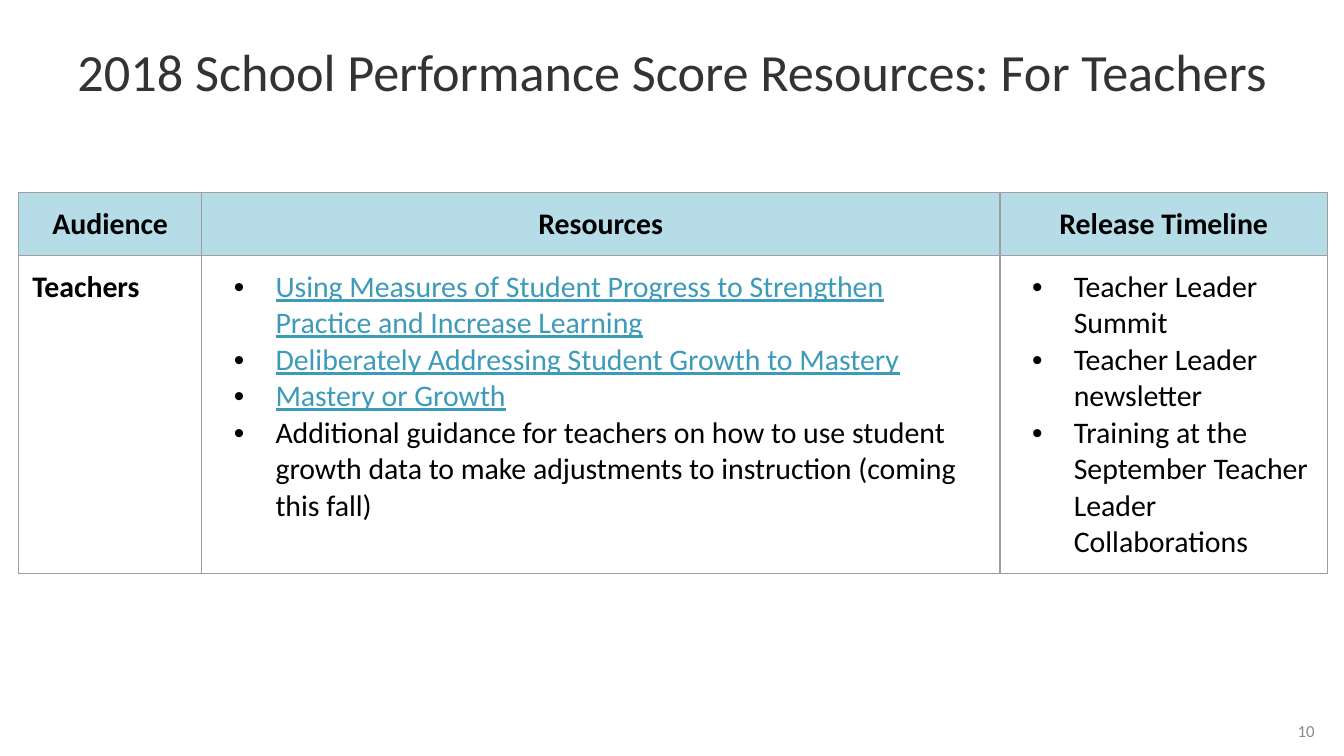
from dataclasses import dataclass

from lxml import etree
from pptx import Presentation
from pptx.dml.color import RGBColor
from pptx.enum.text import MSO_ANCHOR, PP_ALIGN
from pptx.oxml.ns import qn
from pptx.util import Inches, Pt

LEFT, CENTER, RIGHT = PP_ALIGN.LEFT, PP_ALIGN.CENTER, PP_ALIGN.RIGHT
MIDDLE = MSO_ANCHOR.MIDDLE

TITLE = "2018 School Performance Score Resources: For Teachers"
PAGE_NUMBER = "10"
HEADERS = ["Audience", "Resources", "Release Timeline"]
AUDIENCE = "Teachers"
LINKED_RESOURCES = [
    "Using Measures of Student Progress to Strengthen Practice and Increase Learning",
    "Deliberately Addressing Student Growth to Mastery",
    "Mastery or Growth",
]
OTHER_RESOURCES = [
    "Additional guidance for teachers on how to use student growth data "
    "to make adjustments to instruction (coming this fall)",
]
TIMELINE = [
    "Teacher Leader Summit",
    "Teacher Leader newsletter",
    "Training at the September Teacher Leader Collaborations",
]
SLIDE_WIDTH = Inches(10)
SLIDE_HEIGHT = SLIDE_WIDTH * 9 // 16
COLUMN_WIDTHS = [1.36, 5.94, 2.44]
ROW_HEIGHTS = [0.47, 2.37]


@dataclass(frozen=True)
class Theme:
    font: str = "Calibri"
    title: str = "333333"
    text: str = "000000"
    link: str = "3D9BBA"
    muted: str = "8A8A8A"
    header: str = "B6DDE7"
    border: str = "9E9E9E"
    title_size: int = 28
    table_size: int = 16
    number_size: int = 9


THEME = Theme()


def add_bullet(p):
    pPr = p._p.get_or_add_pPr()
    pPr.set("marL", str(Inches(0.45)))
    pPr.set("indent", str(Inches(-0.31)))
    color = etree.SubElement(pPr, qn("a:buClr"))
    etree.SubElement(color, qn("a:srgbClr"), val=THEME.text)
    etree.SubElement(pPr, qn("a:buFont"), typeface="Arial")
    etree.SubElement(pPr, qn("a:buChar"), char="•")


def write(tf, text, size=THEME.table_size, color=THEME.text, bold=False,
          underline=False, align=LEFT, bullet=False, line_spacing=None):
    """Fill the empty first paragraph, or add another one after it."""
    p = tf.paragraphs[0] if not tf.text else tf.add_paragraph()
    if bullet:
        add_bullet(p)
    p.alignment = align
    if line_spacing:
        p.line_spacing = line_spacing
    r = p.add_run()
    r.text = text
    r.font.name = THEME.font
    r.font.size = Pt(size)
    r.font.bold = bold
    r.font.underline = underline
    r.font.color.rgb = RGBColor.from_string(color)


def set_margins(frame, x, y):
    frame.margin_left = frame.margin_right = Inches(x)
    frame.margin_top = frame.margin_bottom = Inches(y)


def set_borders(cell):
    tcPr = cell._tc.get_or_add_tcPr()
    for side in ("lnL", "lnR", "lnT", "lnB"):
        ln = etree.SubElement(tcPr, qn(f"a:{side}"), w=str(Pt(0.75)))
        fill = etree.SubElement(ln, qn("a:solidFill"))
        etree.SubElement(fill, qn("a:srgbClr"), val=THEME.border)


def add_title(s):
    sp = s.shapes.title
    sp.left, sp.top, sp.width, sp.height = map(Inches, (0, -0.02, 10, 1.15))
    tf = sp.text_frame
    tf.word_wrap = True
    tf.vertical_anchor = MIDDLE
    set_margins(tf, 0.1, 0.1)
    write(tf, TITLE, size=THEME.title_size, color=THEME.title, align=CENTER,
          line_spacing=0.9)


def add_page_number(s):
    sp = s.shapes.add_textbox(*map(Inches, (7.44, 5.25, 2.44, 0.38)))
    tf = sp.text_frame
    tf.word_wrap = True
    tf.vertical_anchor = MIDDLE
    set_margins(tf, 0.1, 0.05)
    write(tf, PAGE_NUMBER, size=THEME.number_size, color=THEME.muted, align=RIGHT)


def add_resource_table(s):
    table = s.shapes.add_table(
        len(ROW_HEIGHTS), len(COLUMN_WIDTHS), Inches(0.14), Inches(1.43),
        Inches(sum(COLUMN_WIDTHS)), Inches(sum(ROW_HEIGHTS))).table
    table.first_row = table.horz_banding = False
    for column, width in zip(table.columns, COLUMN_WIDTHS):
        column.width = Inches(width)
    for row, height in zip(table.rows, ROW_HEIGHTS):
        row.height = Inches(height)
    for cell in table.iter_cells():
        set_margins(cell, 0.1, 0.1)
        set_borders(cell)
        cell.fill.background()

    for col, header in enumerate(HEADERS):
        cell = table.cell(0, col)
        cell.fill.solid()
        cell.fill.fore_color.rgb = RGBColor.from_string(THEME.header)
        write(cell.text_frame, header, bold=True, align=CENTER)

    audience, resources, timeline = (cell.text_frame for cell in table.rows[1].cells)
    write(audience, AUDIENCE, bold=True)
    for item in LINKED_RESOURCES:
        write(resources, item, color=THEME.link, underline=True, bullet=True)
    for item in OTHER_RESOURCES:
        write(resources, item, bullet=True)
    for item in TIMELINE:
        write(timeline, item, bullet=True)


def main():
    prs = Presentation()
    prs.slide_width, prs.slide_height = SLIDE_WIDTH, SLIDE_HEIGHT
    s = prs.slides.add_slide(prs.slide_layouts[5])
    add_title(s)
    add_page_number(s)
    add_resource_table(s)
    prs.save("out.pptx")


if __name__ == "__main__":
    main()
